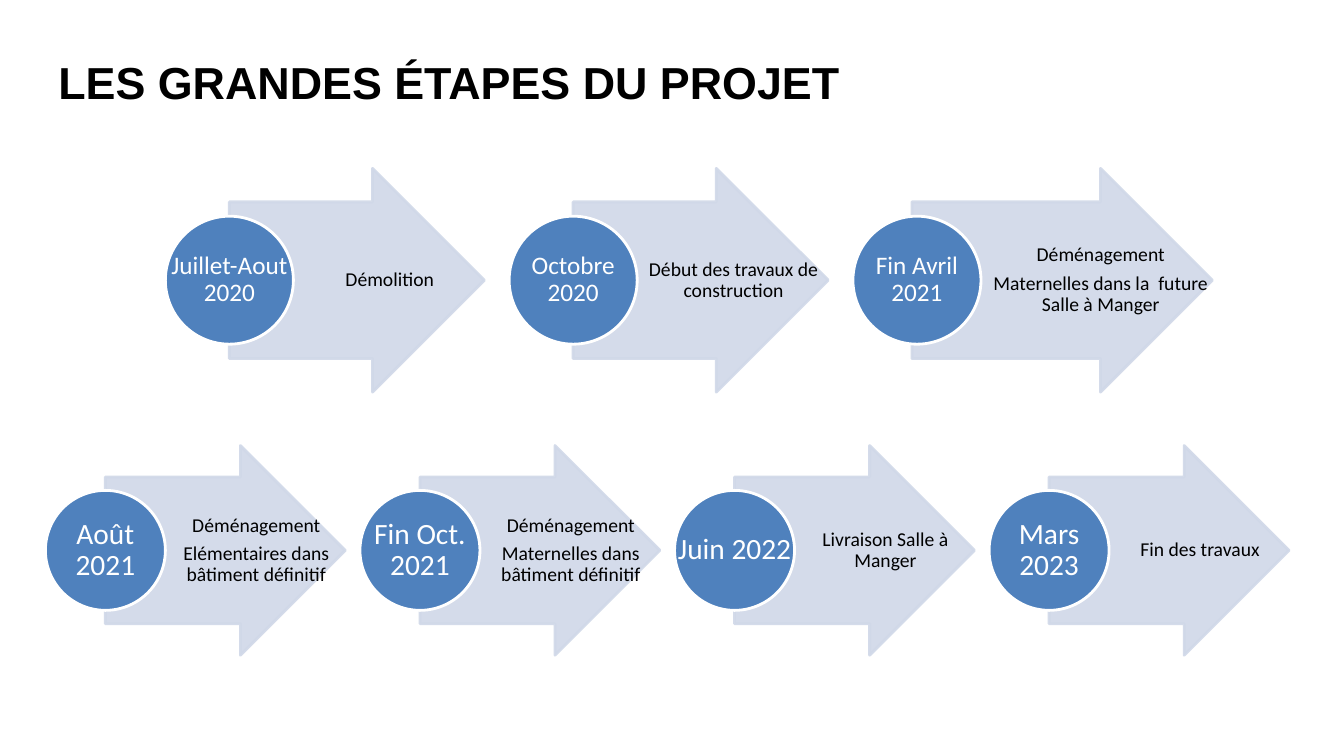
from dataclasses import dataclass

from lxml.etree import SubElement
from pptx import Presentation
from pptx.dml.color import RGBColor
from pptx.enum.shapes import MSO_SHAPE
from pptx.enum.text import MSO_ANCHOR, PP_ALIGN
from pptx.oxml.ns import qn
from pptx.util import Inches, Pt

ARROW_COLOR = "D0D8E8"
CIRCLE_COLOR = "4F81BD"
WHITE = "FFFFFF"
BLACK = "000000"


@dataclass(frozen=True)
class Step:
    date: str
    tasks: tuple[str, ...]
    extra_width: float = 0
    arrow_shift: float = 0


@dataclass(frozen=True)
class Row:
    left: float
    top: float
    pitch: float
    arrow_width: float
    arrow_height: float
    circle_size: float
    date_size: int
    steps: tuple[Step, ...]


ROWS = (
    Row(1.64, 1.67, 3.41, 2.53, 2.22, 1.27, 18, (
        Step("Juillet-Aout 2020", ("Démolition",)),
        Step("Octobre 2020", ("Début des travaux de construction",)),
        Step("Fin Avril 2021",
             ("Déménagement", "Maternelles dans la  future Salle à Manger"),
             extra_width=0.45, arrow_shift=-0.05),
    )),
    Row(0.45, 4.42, 3.12, 2.38, 2.08, 1.19, 21, (
        Step("Août 2021", ("Déménagement", "Elémentaires dans bâtiment définitif")),
        Step("Fin Oct. 2021", ("Déménagement", "Maternelles dans bâtiment définitif")),
        Step("Juin 2022", ("Livraison Salle à Manger",)),
        Step("Mars 2023", ("Fin des travaux",)),
    )),
)


def color(value: str) -> RGBColor:
    return RGBColor.from_string(value)


def add_text(shapes, lines: tuple[str, ...], left: float, top: float,
             width: float, height: float, *, size: int, font: str = "Calibri",
             text_color: str = BLACK, bold: bool = False,
             align: PP_ALIGN = PP_ALIGN.CENTER, line_spacing: float = 0.9,
             space_ratio: float = 0.35,
             insets: tuple[float, float, float, float] = (0.01, 0.01, 0.01, 0.01)) -> None:
    box = shapes.add_textbox(Inches(left), Inches(top), Inches(width), Inches(height))
    frame = box.text_frame
    frame.word_wrap = True
    frame.vertical_anchor = MSO_ANCHOR.MIDDLE
    (frame.margin_left, frame.margin_top,
     frame.margin_right, frame.margin_bottom) = map(Inches, insets)
    for index, line in enumerate(lines):
        paragraph = frame.add_paragraph() if index else frame.paragraphs[0]
        paragraph.alignment = align
        paragraph.line_spacing = line_spacing
        if index < len(lines) - 1:
            paragraph.space_after = Pt(round(size * space_ratio, 1))
        run = paragraph.add_run()
        run.text = line
        run.font.name = font
        run.font.size = Pt(size)
        run.font.bold = bold
        run.font.color.rgb = color(text_color)


def add_filled_shape(shapes, kind: MSO_SHAPE, left: float, top: float,
                     width: float, height: float, fill: str, line: str):
    shape = shapes.add_shape(kind, Inches(left), Inches(top), Inches(width), Inches(height))
    shape.shadow.inherit = False
    shape.fill.solid()
    shape.fill.fore_color.rgb = color(fill)
    shape.line.color.rgb = color(line)
    shape.line.width = Pt(2)
    return shape


def add_step(shapes, row: Row, step: Step, left: float) -> None:
    arrow_left = left + row.circle_size / 2 + step.arrow_shift
    arrow_width = row.arrow_width + step.extra_width
    arrow = add_filled_shape(shapes, MSO_SHAPE.RIGHT_ARROW, arrow_left, row.top,
                             arrow_width, row.arrow_height, ARROW_COLOR, ARROW_COLOR)
    arrow.adjustments[0] = 0.7
    arrow.adjustments[1] = 0.5
    for tint in arrow.element.spPr.iter(qn("a:srgbClr")):
        SubElement(tint, qn("a:alpha"), val="90000")
    add_text(shapes, step.tasks, arrow_left + arrow_width / 4, row.top,
             arrow_width * 3 / 4, row.arrow_height, size=14,
             insets=(0.04, 0.01, 0.02, 0.01))

    circle_top = row.top + (row.arrow_height - row.circle_size) / 2
    circle_box = (left, circle_top, row.circle_size, row.circle_size)
    add_filled_shape(shapes, MSO_SHAPE.OVAL, *circle_box, CIRCLE_COLOR, WHITE)
    add_text(shapes, (step.date,), *circle_box, size=row.date_size, text_color=WHITE)


def main() -> None:
    presentation = Presentation()
    presentation.slide_width = Inches(13.33)
    presentation.slide_height = Inches(7.5)
    slide = presentation.slides.add_slide(presentation.slide_layouts[6])
    add_text(slide.shapes, ("LES GRANDES ÉTAPES DU PROJET",), 0.48, 0.18, 12, 1.25,
             size=32, font="Arial", bold=True, align=PP_ALIGN.LEFT,
             line_spacing=1.0, insets=(0.1, 0.05, 0.1, 0.05))
    for row in ROWS:
        group = slide.shapes.add_group_shape()
        for index, step in enumerate(row.steps):
            add_step(group.shapes, row, step, row.left + index * row.pitch)
    presentation.save("out.pptx")


if __name__ == "__main__":
    main()
